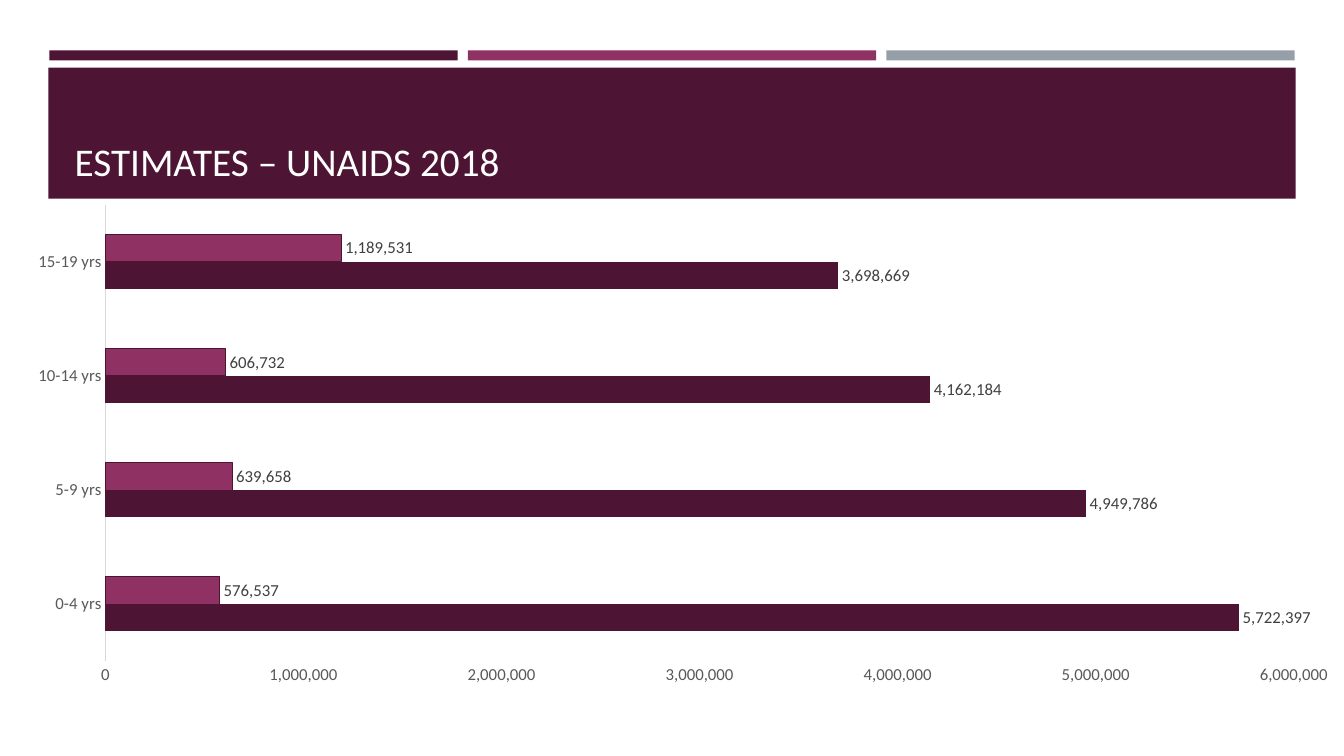
from lxml.etree import SubElement
from pptx import Presentation
from pptx.chart.data import CategoryChartData
from pptx.dml.color import RGBColor
from pptx.enum.chart import XL_CHART_TYPE as ChartType, XL_LABEL_POSITION as LabelPosition, XL_TICK_MARK as TickMark
from pptx.enum.shapes import MSO_SHAPE as Shape
from pptx.enum.text import MSO_ANCHOR as Anchor, PP_ALIGN as Align
from pptx.oxml.ns import qn
from pptx.util import Inches, Pt

PLUM, MAGENTA, GREY, WHITE = "4D1434", "903163", "969FA7", "FFFFFF"
AGE_GROUPS = ["0-4 yrs", "5-9 yrs", "10-14 yrs", "15-19 yrs"]
ESTIMATES = [
    (PLUM, None, [5722397, 4949786, 4162184, 3698669]),
    (MAGENTA, PLUM, [576537, 639658, 606732, 1189531]),
]


def color(hex_code):
    """Turn a hex string into a colour."""
    return RGBColor.from_string(hex_code)


def apply(target, formats):
    """Set each attribute of the target from a dict."""
    for name, value in formats.items():
        setattr(target, name, value)


def style_font(font, size, hex_code):
    """Give a font its face, size and colour."""
    apply(font, {"name": "Calibri", "size": Pt(size), "bold": False})
    font.color.rgb = color(hex_code)


def add_bar(slide, left, top, width, height, hex_code):
    """Add a plain filled rectangle."""
    bar = slide.shapes.add_shape(Shape.RECTANGLE, *map(Inches, (left, top, width, height)))
    bar.shadow.inherit = False
    bar.fill.solid()
    bar.fill.fore_color.rgb = color(hex_code)
    bar.line.fill.background()


def add_header(slide, left, top, width, height):
    """Place three accent strips, the title band and the title."""
    strip, gap = 4.05, 0.1
    for index, hex_code in enumerate((PLUM, MAGENTA, GREY)):
        add_bar(slide, left + 0.01 + index * (strip + gap), top, strip, 0.1, hex_code)
    add_bar(slide, left, top + 0.17, width, height - 0.17, PLUM)

    title = slide.shapes.title
    slide.shapes._spTree.append(title._element)
    apply(title, {"left": Inches(left + 0.16), "top": Inches(top + 0.27),
                  "width": Inches(width - 0.31), "height": Inches(height - 0.36)})
    title.text_frame.text = "ESTIMATES – UNAIDS 2018"
    title.text_frame.vertical_anchor = Anchor.BOTTOM
    heading = title.text_frame.paragraphs[0]
    heading.alignment = Align.LEFT
    style_font(heading.font, 28, WHITE)


def set_plot_layout(chart, x, y, w, h):
    """Fix the inner plot area as fractions of the chart."""
    plot_area = chart._chartSpace.chart.plotArea
    layout = plot_area.find(qn("c:layout"))
    if layout is None:
        layout = SubElement(plot_area, qn("c:layout"))
        plot_area.insert(0, layout)
    manual = SubElement(layout, qn("c:manualLayout"))
    settings = {"layoutTarget": "inner", "xMode": "edge", "yMode": "edge",
                "x": x, "y": y, "w": w, "h": h}
    for tag, value in settings.items():
        SubElement(manual, qn(f"c:{tag}")).set("val", str(value))


def add_estimates_chart(slide, left, top, width, height):
    """Place the clustered bars of estimates by age group."""
    data = CategoryChartData(number_format="#,##0")
    data.categories = AGE_GROUPS
    for _, _, values in ESTIMATES:
        data.add_series("", values)
    chart = slide.shapes.add_chart(
        ChartType.BAR_CLUSTERED, *map(Inches, (left, top, width, height)), data).chart
    apply(chart, {"has_legend": False, "has_title": False})
    style_font(chart.font, 10, "000000")
    set_plot_layout(chart, 0.072, 0.027, 0.897, 0.806)

    ages, counts = chart.category_axis, chart.value_axis
    for axis in (ages, counts):
        apply(axis, {"major_tick_mark": TickMark.NONE, "minor_tick_mark": TickMark.NONE,
                     "has_major_gridlines": False})
        style_font(axis.tick_labels.font, 12, "595959")
    ages.format.line.color.rgb = color("D9D9D9")
    ages.format.line.width = Pt(0.75)
    apply(counts, {"minimum_scale": 0, "maximum_scale": 6000000, "major_unit": 1000000})
    apply(counts.tick_labels, {"number_format": "#,##0", "number_format_is_linked": False})
    counts.format.line.fill.background()

    plot = chart.plots[0]
    apply(plot, {"gap_width": 219, "overlap": 0, "vary_by_categories": False})
    for series, (fill, outline, _) in zip(plot.series, ESTIMATES):
        series.invert_if_negative = False
        series.format.fill.solid()
        series.format.fill.fore_color.rgb = color(fill)
        if outline:
            series.format.line.color.rgb = color(outline)
            series.format.line.width = Pt(0.75)
        else:
            series.format.line.fill.background()
        apply(series.data_labels, {"show_value": True, "number_format": "#,##0",
                                   "number_format_is_linked": False,
                                   "position": LabelPosition.OUTSIDE_END})
        style_font(series.data_labels.font, 12, "404040")


def main():
    """Build and save the slide."""
    deck = Presentation()
    apply(deck, {"slide_width": Inches(13.33), "slide_height": Inches(7.5)})
    slide = deck.slides.add_slide(deck.slide_layouts[5])
    add_header(slide, 0.48, 0.5, 12.37, 1.47)
    add_estimates_chart(slide, 0.1, 1.88, 13.14, 5.62)
    deck.save("out.pptx")


if __name__ == "__main__":
    main()
